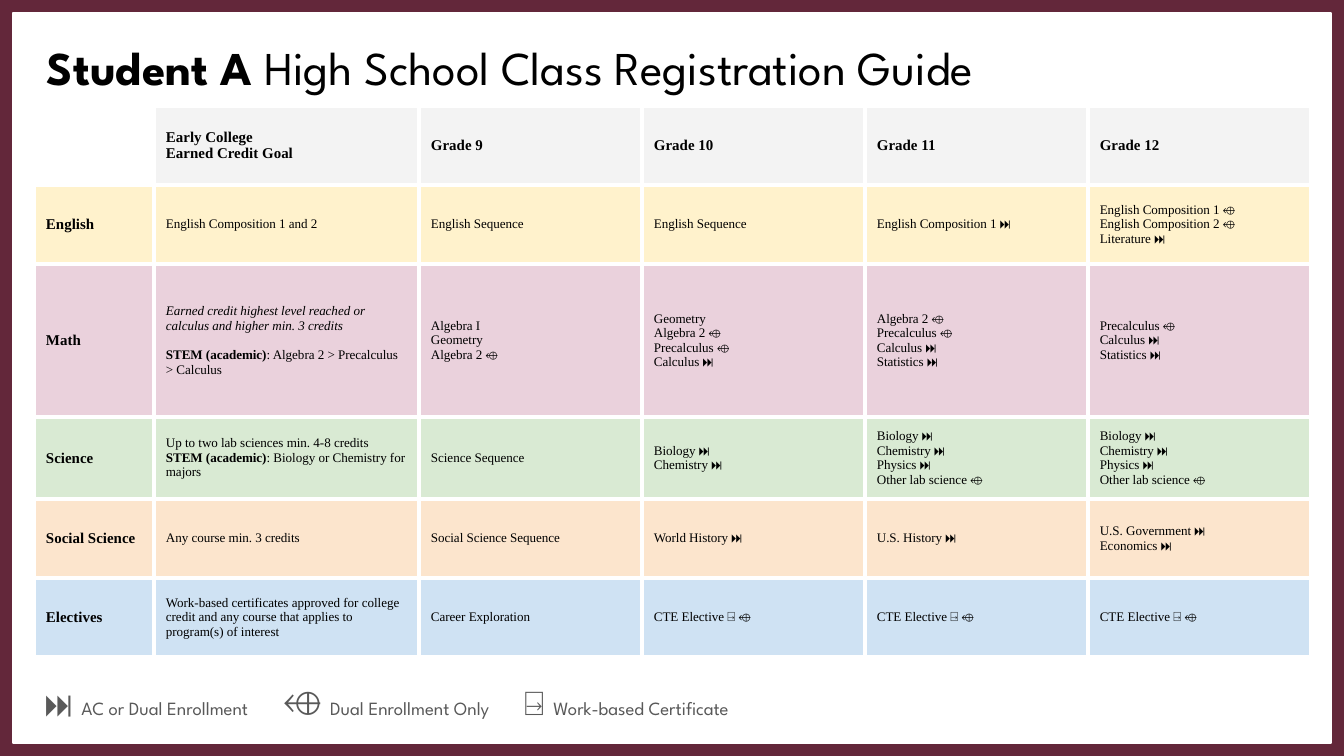
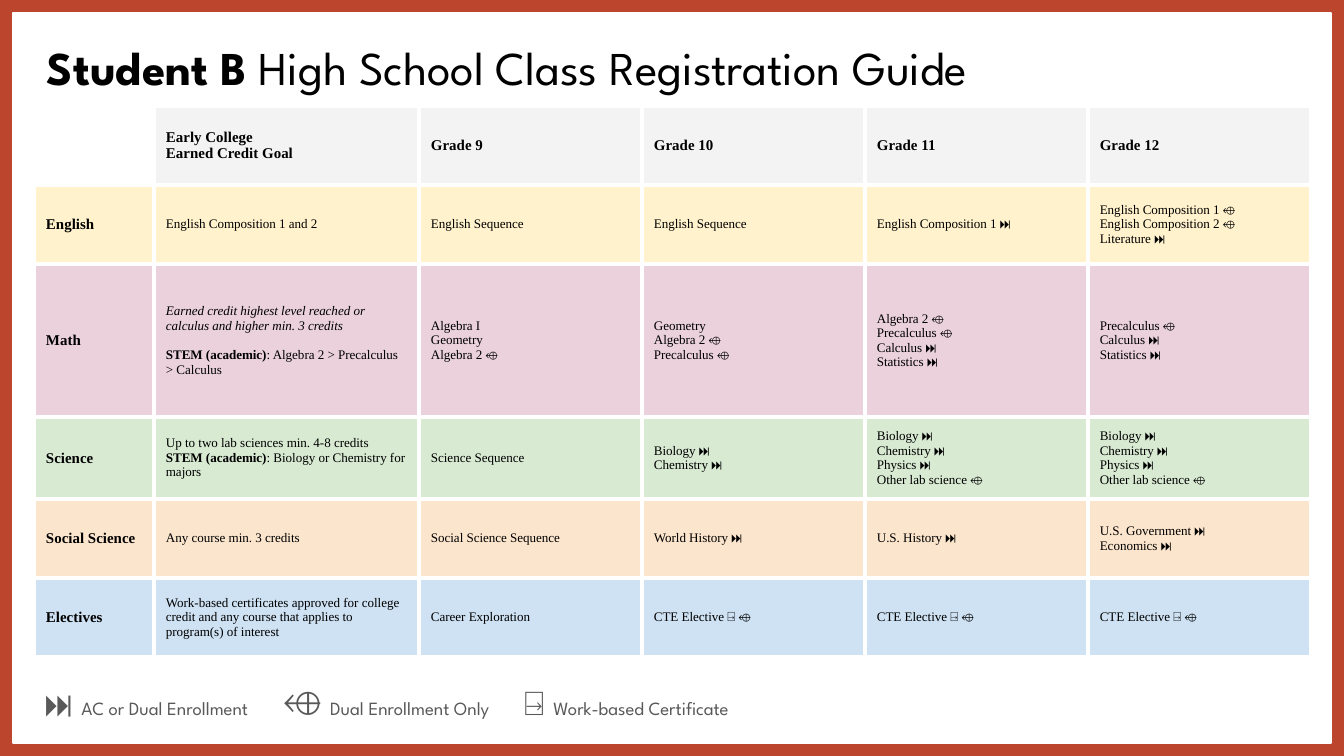
from lxml import etree
from pptx import Presentation
from pptx import util as u
from pptx.dml.color import RGBColor
from pptx.enum import shapes, text
from pptx.oxml import ns

PX = 914400 / 134.4
COLORS = {
    "white": "FFFFFF", "black": "000000", "grey": "595959", "header": "F3F3F3",
    "English": "FFF2CC", "Math": "EAD1DC", "Science": "D9EAD3",
    "Social Science": "FCE5CD", "Electives": "CFE2F3",
    "Student A": "63273A", "Student B": "BC452E",
}
SANS, SERIF = "League Spartan", "Times New Roman"
COLUMNS = [120, 265, 223, 223, 223, 223]
ROWS = [79, 79, 153, 82, 79, 79, 79]
HEADER = ["", "Early College\nEarned Credit Goal", "Grade 9", "Grade 10", "Grade 11", "Grade 12"]
LABS = "Biology ⏭\nChemistry ⏭\nPhysics ⏭\nOther lab science ⬲"
CTE = "CTE Elective ⍈ ⬲"
STEM = "STEM (academic)"
COURSES = {
    "English": [
        "English Composition 1 and 2", "English Sequence", "English Sequence",
        "English Composition 1 ⏭",
        "English Composition 1 ⬲\nEnglish Composition 2 ⬲\nLiterature ⏭"],
    "Math": [
        "Earned credit highest level reached or calculus and higher min. 3 credits\n"
        "STEM (academic): Algebra 2 > Precalculus > Calculus",
        "Algebra I\nGeometry\nAlgebra 2 ⬲",
        "Geometry\nAlgebra 2 ⬲\nPrecalculus ⬲",
        "Algebra 2 ⬲\nPrecalculus ⬲\nCalculus ⏭\nStatistics ⏭",
        "Precalculus ⬲\nCalculus ⏭\nStatistics ⏭"],
    "Science": [
        "Up to two lab sciences min. 4-8 credits\n"
        "STEM (academic): Biology or Chemistry for majors",
        "Science Sequence", "Biology ⏭\nChemistry ⏭", LABS, LABS],
    "Social Science": [
        "Any course min. 3 credits", "Social Science Sequence", "World History ⏭",
        "U.S. History ⏭", "U.S. Government ⏭\nEconomics ⏭"],
    "Electives": [
        "Work-based certificates approved for college credit and any course "
        "that applies to program(s) of interest",
        "Career Exploration", CTE, CTE, CTE],
}
STUDENTS = {"Student A": "\nCalculus ⏭", "Student B": ""}
LEGEND = [
    ("⏭", "AC or Dual Enrollment", (34, 681, 240, 42)),
    ("⬲", "Dual Enrollment Only", (273, 681, 240, 42)),
    ("⍈", "Work-based Certificate", (513, 675, 259, 55)),
]


def px(length):
    return u.Emu(round(length * PX))


def rgb(name):
    return RGBColor.from_string(COLORS[name])


def style(font, size, face=None, color=None, bold=None):
    font.size = u.Pt(size)
    font.bold = bold
    if face:
        font.name = face
    if color:
        font.color.rgb = rgb(color)


def add_span(para, words):
    span = para.add_run()
    span.text = words
    return span


def add_text_box(page, box, inset, anchor):
    frame = page.shapes.add_textbox(*map(px, box)).text_frame
    frame.word_wrap = True
    frame.vertical_anchor = anchor
    frame.margin_left = frame.margin_right = px(inset)
    frame.margin_top = frame.margin_bottom = px(inset)
    return frame.paragraphs[0]


def add_frame(page, box, student):
    page.background.fill.solid()
    page.background.fill.fore_color.rgb = rgb(student)
    panel = page.shapes.add_shape(shapes.MSO_SHAPE.RECTANGLE, *map(px, box))
    panel.shadow.inherit = False
    panel.fill.solid()
    panel.fill.fore_color.rgb = rgb("white")
    panel.line.color.rgb = rgb("white")
    panel.line.width = u.Pt(0.75)


def add_title(page, box, student):
    para = add_text_box(page, box, 13, text.MSO_ANCHOR.BOTTOM)
    add_span(para, student).font.bold = True
    add_span(para, " High School Class Registration Guide")
    style(para.font, 25.2)
    for span in para.runs:
        style(span.font, 25.2, SANS, "black", span.font.bold)


def set_borders(cell, bottom=2.25, sides=2.25):
    props = cell._tc.get_or_add_tcPr()
    widths = {"L": sides, "R": sides, "T": 2.25, "B": bottom}
    for index, (side, width) in enumerate(widths.items()):
        line = etree.Element(ns.qn(f"a:ln{side}"), w=str(u.Pt(width)))
        fill = etree.SubElement(line, ns.qn("a:solidFill"))
        etree.SubElement(fill, ns.qn("a:srgbClr"), val=COLORS["white"])
        props.insert(index, line)


def fill_cell(cell, words, color, heading):
    cell.fill.solid()
    cell.fill.fore_color.rgb = rgb(color)
    set_borders(cell)
    cell.vertical_anchor = text.MSO_ANCHOR.MIDDLE
    cell.margin_left = cell.margin_right = px(12)
    cell.margin_top = cell.margin_bottom = px(9)
    frame = cell.text_frame
    for index, line in enumerate(words.split("\n")):
        para = frame.add_paragraph() if index else frame.paragraphs[0]
        style(para.font, 8 if heading else 7, SERIF, "black", heading)
        if line.startswith(STEM):
            add_span(para, STEM).font.bold = True
            line = line.removeprefix(STEM)
            if color == "Math":
                para.space_before = u.Pt(8)
        elif line.startswith("Earned credit"):
            para.font.italic = True
        if line:
            add_span(para, line)


def add_schedule(page, left, top, student):
    box = (left, top, sum(COLUMNS), sum(ROWS))
    table = page.shapes.add_table(len(ROWS), len(COLUMNS), *map(px, box)).table
    table.first_row = table.horz_banding = False
    for column, width in zip(table.columns, COLUMNS):
        column.width = px(width)
    for row, height in zip(table.rows, ROWS):
        row.height = px(height)
    for col, words in enumerate(HEADER):
        fill_cell(table.cell(0, col), words, "header" if col else "white", True)
    for row, (subject, courses) in enumerate(COURSES.items(), 1):
        for col, words in enumerate([subject, *courses]):
            if subject == "Math" and HEADER[col] == "Grade 10":
                words += STUDENTS[student]
            fill_cell(table.cell(row, col), words, subject, col == 0)
    last = len(ROWS) - 1
    table.cell(last, 0).merge(table.cell(last, len(COLUMNS) - 1))
    for col in range(len(COLUMNS)):
        cell = table.cell(last, col)
        cell.fill.background()
        set_borders(cell, 0.75, 0.75)


def add_legend_item(page, box, symbol, label):
    para = add_text_box(page, box, 11, text.MSO_ANCHOR.MIDDLE)
    style(add_span(para, symbol + " ").font, 18, "Arial", "grey")
    style(add_span(para, label).font, 10, SANS, "grey")


def add_guide(deck, student):
    page = deck.slides.add_slide(deck.slide_layouts[6])
    add_frame(page, (13, 13, 1318, 730), student)
    add_title(page, (34, 23, 1253, 85), student)
    add_schedule(page, 34, 106, student)
    for symbol, label, box in LEGEND:
        add_legend_item(page, box, symbol, label)


def main():
    deck = Presentation()
    deck.slide_width, deck.slide_height = px(1344), px(756)
    for student in STUDENTS:
        add_guide(deck, student)
    deck.save("out.pptx")


if __name__ == "__main__":
    main()
